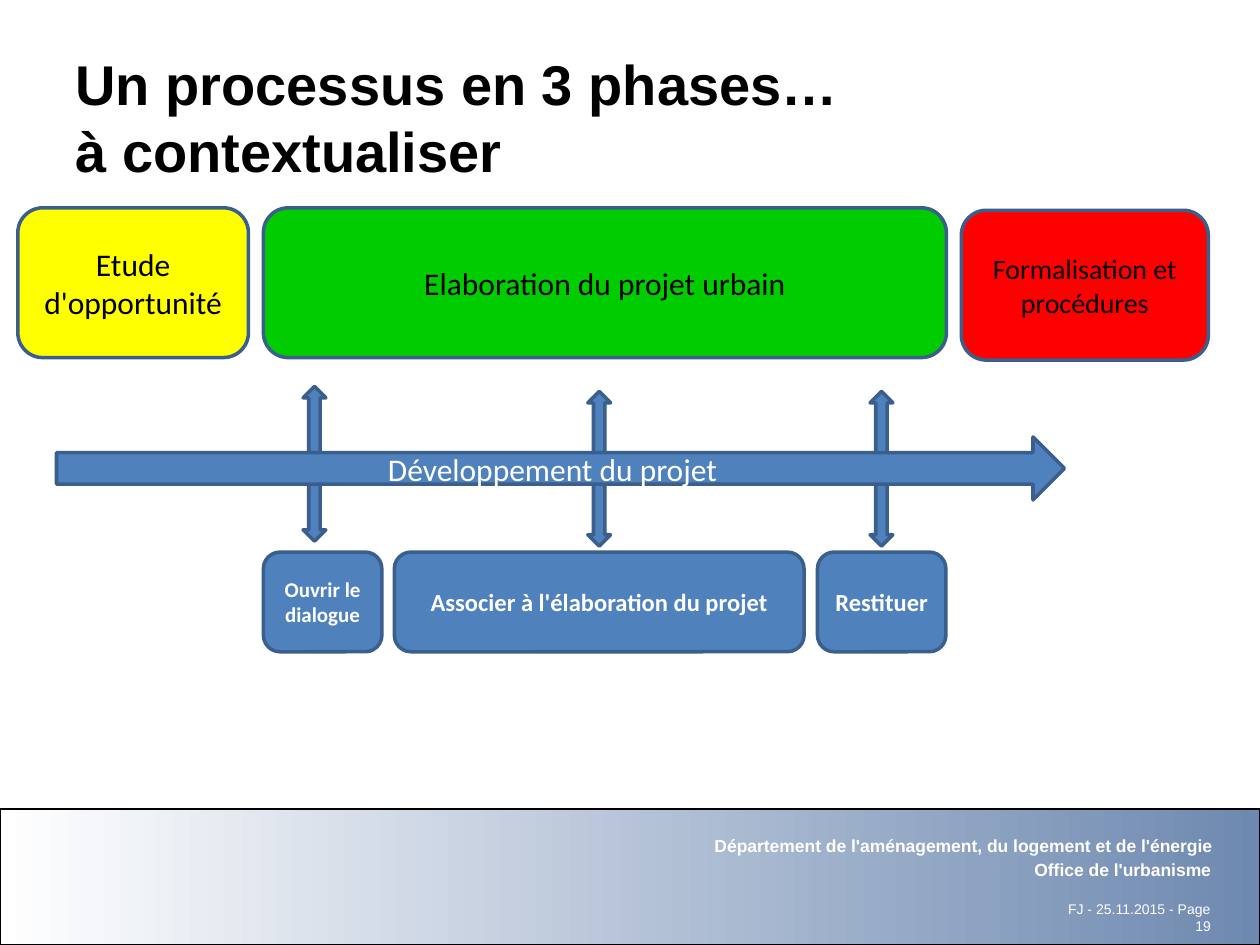
from pptx import Presentation
from pptx.dml.color import RGBColor
from pptx.enum.shapes import MSO_SHAPE as Shape
from pptx.enum.text import MSO_ANCHOR as Anchor, PP_ALIGN as Align
from pptx.util import Cm, Pt

BLACK = RGBColor(0x00, 0x00, 0x00)
WHITE = RGBColor(0xFF, 0xFF, 0xFF)
BLUE = RGBColor(0x4F, 0x81, 0xBD)
OUTLINE = RGBColor(0x3A, 0x5F, 0x8C)
BAND_BLUE = RGBColor(0x6E, 0x89, 0xB0)
GREEN = RGBColor(0x00, 0xCC, 0x00)
RED = RGBColor(0xFF, 0x00, 0x00)
YELLOW = RGBColor(0xFF, 0xFF, 0x00)


class SlideBuilder:
    heading_font = "Arial"
    diagram_font = "Calibri"

    def __init__(self, slide):
        self.slide = slide

    def set_text(self, shape, text, font, size, color, bold, align, anchor):
        frame = shape.text_frame
        frame.word_wrap = True
        frame.vertical_anchor = anchor
        paragraph = frame.paragraphs[0]
        paragraph.text = text
        paragraph.alignment = align
        paragraph.font.name = font
        paragraph.font.size = Pt(size)
        paragraph.font.bold = bold
        paragraph.font.color.rgb = color

    def text(self, box, text, size, color=WHITE, bold=True,
             align=Align.RIGHT, anchor=Anchor.TOP):
        shape = self.slide.shapes.add_textbox(*map(Cm, box))
        self.set_text(shape, text, self.heading_font, size, color, bold, align, anchor)

    def shape(self, kind, box, fill=BLUE, line=OUTLINE, width=2):
        shape = self.slide.shapes.add_shape(kind, *map(Cm, box))
        shape.shadow.inherit = False
        shape.fill.solid()
        shape.fill.fore_color.rgb = fill
        shape.line.color.rgb = line
        shape.line.width = Pt(width)
        return shape

    def labelled(self, kind, box, text, size, fill=BLUE, color=WHITE, bold=False):
        shape = self.shape(kind, box, fill)
        self.set_text(shape, text, self.diagram_font, size, color, bold,
                      Align.CENTER, Anchor.MIDDLE)

    def vertical_arrow(self, left, top):
        self.shape(Shape.LEFT_RIGHT_ARROW, (left, top, 3.12, 0.46)).rotation = 270

    def gradient_band(self, box, start, end):
        fill = self.shape(Shape.RECTANGLE, box, line=BLACK, width=1).fill
        fill.gradient()
        fill.gradient_angle = 0
        for stop, color, position in zip(fill.gradient_stops, (start, end), (0, 1)):
            stop.color.rgb = color
            stop.position = position


def main():
    presentation = Presentation()
    presentation.slide_width, presentation.slide_height = Cm(25.4), Cm(19.05)
    builder = SlideBuilder(presentation.slides.add_slide(presentation.slide_layouts[6]))

    # Footer band
    builder.gradient_band((0, 16.31, 25.4, 2.74), WHITE, BAND_BLUE)
    builder.text((21.18, 18.03, 3.48, 0.94), "FJ - 25.11.2015 - Page 19", 8, bold=False)
    builder.text((3.89, 17.2, 20.77, 0.28), "Office de l'urbanisme", 10)
    builder.text((3.86, 16.71, 20.82, 0.3),
                 "Département de l'aménagement, du logement et de l'énergie", 10)

    # Title
    builder.text((1.27, 0.76, 22.86, 3.18), "Un processus en 3 phases… \và contextualiser",
                 32, BLACK, align=Align.LEFT, anchor=Anchor.MIDDLE)

    # Three phases
    for left, top, width, text, size, fill in (
        (0.36, 4.19, 4.65, "Etude d'opportunité", 18, YELLOW),
        (5.31, 4.19, 13.77, "Elaboration du projet urbain", 18, GREEN),
        (19.38, 4.24, 4.98, "Formalisation et procédures", 16, RED),
    ):
        builder.labelled(Shape.ROUNDED_RECTANGLE, (left, top, width, 3.02),
                         text, size, fill, BLACK)

    # Dialogue steps
    for left, width, text, size in (
        (5.31, 2.39, "Ouvrir le dialogue", 12),
        (7.95, 8.26, "Associer à l'élaboration du projet", 14),
        (16.48, 2.59, "Restituer", 14),
    ):
        builder.labelled(Shape.ROUNDED_RECTANGLE, (left, 11.13, width, 2.01),
                         text, size, bold=True)

    # Exchanges, crossed by the project arrow
    for left, top in ((4.78, 9.12), (10.52, 9.22), (16.21, 9.22)):
        builder.vertical_arrow(left, top)
    builder.labelled(Shape.RIGHT_ARROW, (1.14, 8.81, 20.32, 1.27),
                     "Développement du projet", 18)

    presentation.save("out.pptx")


if __name__ == "__main__":
    main()
